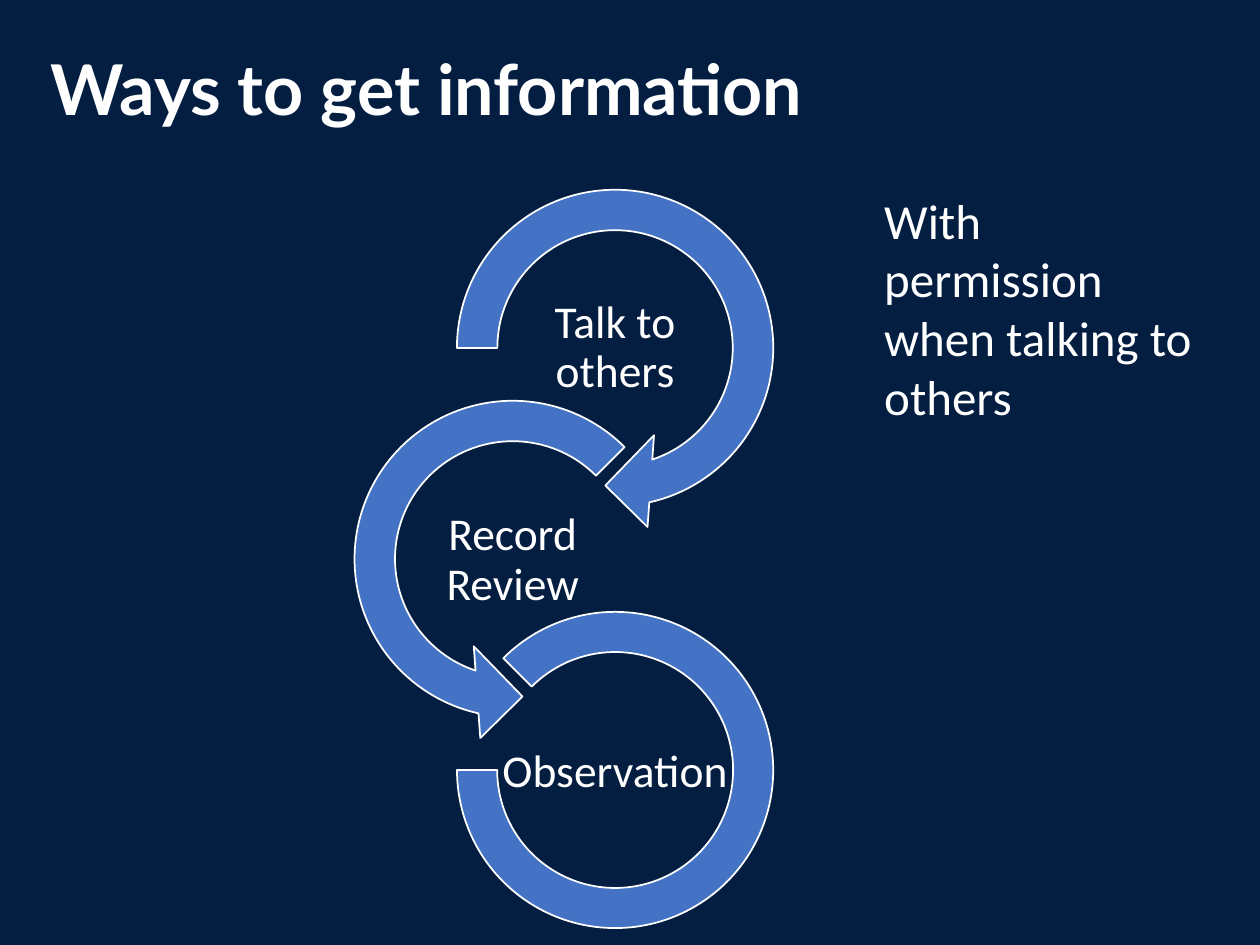
from pptx import Presentation
from pptx.dml.color import RGBColor
from pptx.enum.shapes import MSO_SHAPE as Shape
from pptx.enum.text import MSO_ANCHOR as Anchor, PP_ALIGN as Align
from pptx.util import Pt

HEADING = "Ways to get information"
REMARK = "With permission when talking to others"
ARROW_SIZE, ARC_SIZE = 210.2, 180.7
RIGHT_X, LEFT_X = 351.5, 293
STEPS = [
    ("Talk to others", Shape.CIRCULAR_ARROW, RIGHT_X, ARROW_SIZE, 116.6,
     (0.11, 11.423, 45, 108, 0.125)),
    ("Record Review", Shape.LEFT_CIRCULAR_ARROW, LEFT_X, ARROW_SIZE, 116.6,
     (0.11, 11.423, 63, 189, 0.125)),
    ("Observation", Shape.BLOCK_ARC, RIGHT_X, ARC_SIZE, 167,
     (135, 108, 0.127)),
]
FIRST_Y, STEP_PITCH = 198.8, 120.6
FIRST_LABEL_Y, LABEL_PITCH, LABEL_HEIGHT = 199.1, 121.3, 58.3
NAVY, BLUE, WHITE = "041E42", "4472C4", "FFFFFF"


def colour(hex_value):
    return RGBColor.from_string(hex_value)


def centred(x, y, width, height):
    return [Pt(v) for v in (x - width / 2, y - height / 2, width, height)]


def write(frame, text, font, paragraph_format=None, frame_format=None):
    frame.text = text
    paragraph = frame.paragraphs[0]
    for target, values in (
        (frame, {"word_wrap": True, **(frame_format or {})}),
        (paragraph, paragraph_format or {}),
        (paragraph.runs[0].font, font),
    ):
        for key, value in values.items():
            setattr(target, key, value)
    paragraph.runs[0].font.color.rgb = colour(WHITE)


def add_ring(shapes, kind, x, y, size, adjustments):
    ring = shapes.add_shape(kind, *centred(x, y, size, size))
    for index, value in enumerate(adjustments):
        ring.adjustments[index] = value
    ring.shadow.inherit = False
    ring.fill.solid()
    ring.fill.fore_color.rgb = colour(BLUE)
    ring.line.color.rgb = colour(WHITE)
    ring.line.width = Pt(1)


def main():
    deck = Presentation()
    deck.slide_width, deck.slide_height = Pt(720), Pt(540)
    slide = deck.slides.add_slide(deck.slide_layouts[5])
    slide.background.fill.solid()
    slide.background.fill.fore_color.rgb = colour(NAVY)

    title = slide.shapes.title
    title.left, title.top, title.width, title.height = Pt(21.6), Pt(0.7), Pt(620.6), Pt(104.4)
    write(title.text_frame, HEADING,
          {"name": "Lato", "size": Pt(40), "bold": True},
          {"alignment": Align.LEFT, "line_spacing": 0.9},
          {"vertical_anchor": Anchor.MIDDLE})

    margins = dict.fromkeys(
        ("margin_left", "margin_top", "margin_right", "margin_bottom"), Pt(1.5))
    cycle = slide.shapes.add_group_shape().shapes
    for row, (label, kind, x, size, label_width, adjustments) in enumerate(STEPS):
        add_ring(cycle, kind, x, FIRST_Y + row * STEP_PITCH, size, adjustments)
        label_y = FIRST_LABEL_Y + row * LABEL_PITCH
        label_box = cycle.add_textbox(*centred(x, label_y, label_width, LABEL_HEIGHT))
        write(label_box.text_frame, label,
              {"name": "Calibri", "size": Pt(26)},
              {"alignment": Align.CENTER, "line_spacing": 0.9},
              {"vertical_anchor": Anchor.MIDDLE, **margins})

    remark_box = slide.shapes.add_textbox(Pt(498.2), Pt(105.1), Pt(200.2), Pt(143.3))
    write(remark_box.text_frame, REMARK, {"name": "Calibri", "size": Pt(28)})

    deck.save("out.pptx")


if __name__ == "__main__":
    main()
